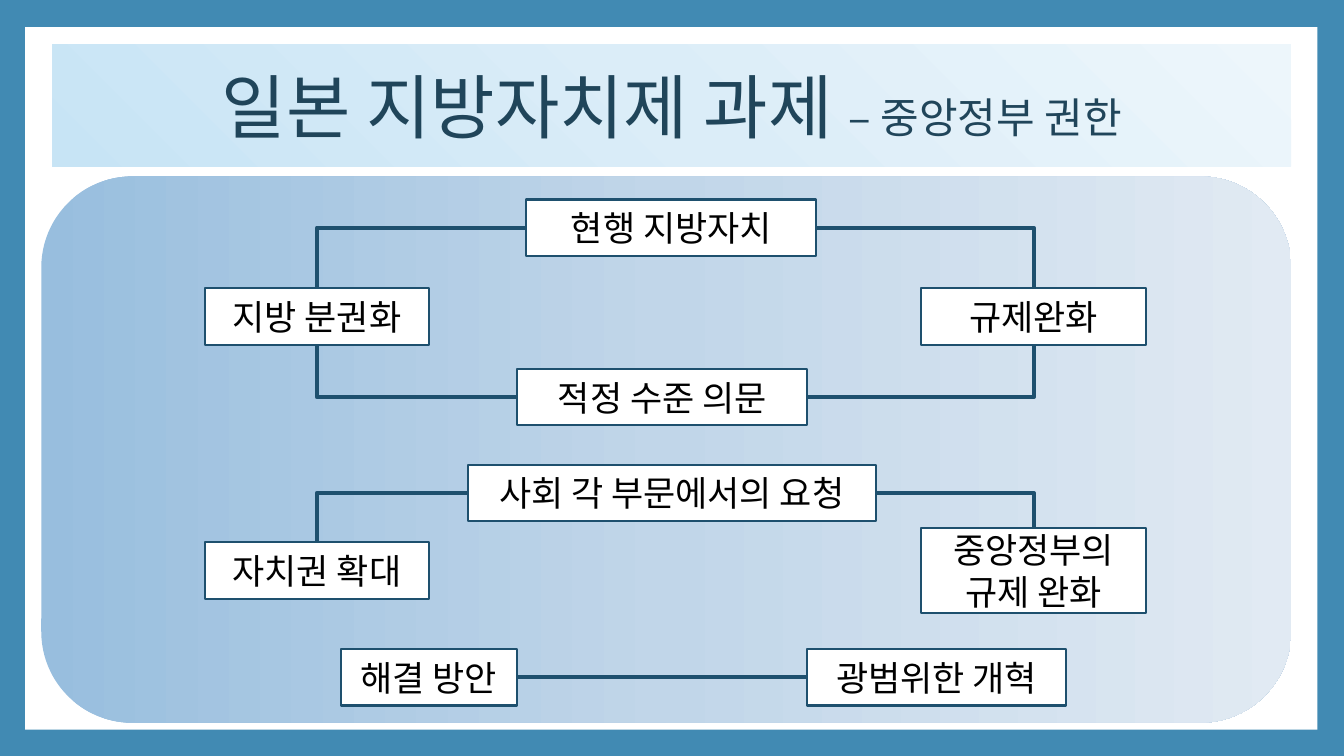
import pptx
import pptx.util
import pptx.dml.color
import pptx.enum.shapes
import pptx.enum.text
import pptx.oxml
import pptx.oxml.ns

EMU_PER_PX = 9144  # 100 px to the inch
FONT = "Arial"
FRAME, WHITE, BLACK, NAVY, TITLE_INK = "418AB3", "FFFFFF", "000000", "1E506E", "20455A"

TITLE = [("일본 지방자치제 과제 ", 50), ("– 중앙정부 권한", 30)]
TITLE_STOPS = ["C7E4F5", "DBEDF8", "EDF6FB"]
PANEL_STOPS = ["98BEDE", "C1D6E9", "E1EAF3"]
FROM_LEFT = '<a:lin {} ang="0" scaled="0"/>'
FROM_BOTTOM_LEFT = '<a:path {} path="circle"><a:fillToRect t="100000" r="100000"/></a:path>'

# name: (text, left, top, width, height)
BOXES = {
    "current": ("현행 지방자치", 522, 198, 288, 56),
    "decentralize": ("지방 분권화", 203, 286, 223, 56),
    "deregulate": ("규제완화", 914, 286, 223, 56),
    "doubt": ("적정 수준 의문", 513, 366, 288, 56),
    "demand": ("사회 각 부문에서의 요청", 464, 461, 405, 56),
    "autonomy": ("자치권 확대", 203, 538, 223, 56),
    "relax": ("중앙정부의 규제 완화", 914, 524, 223, 84),
    "solution": ("해결 방안", 338, 644, 175, 56),
    "reform": ("광범위한 개혁", 801, 644, 257, 56),
}

# connection sites of a rectangle
TOP, LEFT, BOTTOM, RIGHT = range(4)
LINKS = [
    ("solution", RIGHT, "reform", LEFT),
    ("current", LEFT, "decentralize", TOP),
    ("current", RIGHT, "deregulate", TOP),
    ("doubt", LEFT, "decentralize", BOTTOM),
    ("doubt", RIGHT, "deregulate", BOTTOM),
    ("demand", LEFT, "autonomy", TOP),
    ("demand", RIGHT, "relax", TOP),
]


def px(length):
    return pptx.util.Emu(length * EMU_PER_PX)


def color(value):
    return pptx.dml.color.RGBColor.from_string(value)


def add_box(page, left, top, width, height, kind="RECTANGLE", fill=WHITE, line=None):
    kind = getattr(pptx.enum.shapes.MSO_SHAPE, kind)
    box = page.shapes.add_shape(kind, px(left), px(top), px(width), px(height))
    box.shadow.inherit = False
    box.fill.solid()
    box.fill.fore_color.rgb = color(fill)
    if line:
        box.line.color.rgb = color(line)
        box.line.width = pptx.util.Pt(1.5)
    else:
        box.line.fill.background()
    return box


def set_gradient(box, stops, direction):
    """Fill the box with evenly spaced colour stops."""
    box.fill.gradient()
    gradient = box.element.spPr.find(pptx.oxml.ns.qn("a:gradFill"))
    for child in list(gradient):
        gradient.remove(child)
    namespace = pptx.oxml.ns.nsdecls("a")
    marks = "".join(
        f'<a:gs pos="{100000 * i // (len(stops) - 1)}"><a:srgbClr val="{stop}"/></a:gs>'
        for i, stop in enumerate(stops)
    )
    gradient.append(pptx.oxml.parse_xml(f"<a:gsLst {namespace}>{marks}</a:gsLst>"))
    gradient.append(pptx.oxml.parse_xml(direction.format(namespace)))


def write(box, text, size, ink):
    """Add a run of text to the centred paragraph of the box."""
    box.text_frame.word_wrap = True
    box.text_frame.vertical_anchor = pptx.enum.text.MSO_ANCHOR.MIDDLE
    para = box.text_frame.paragraphs[0]
    para.alignment = pptx.enum.text.PP_ALIGN.CENTER
    span = para.add_run()
    span.text = text
    span.font.name = FONT
    span.font.size = pptx.util.Pt(size)
    span.font.color.rgb = color(ink)


def link(page, start, start_site, end, end_site):
    """Join two boxes, with one corner unless both sites are on the sides."""
    straight = end_site in (LEFT, RIGHT)
    kinds = pptx.enum.shapes.MSO_CONNECTOR
    kind = kinds.STRAIGHT if straight else kinds.ELBOW
    connector = page.shapes.add_connector(kind, 0, 0, 0, 0)
    connector.begin_connect(start, start_site)
    connector.end_connect(end, end_site)
    connector.line.color.rgb = color(NAVY)
    connector.line.width = pptx.util.Pt(3)
    properties = connector.element.spPr
    if not straight:
        properties.find(pptx.oxml.ns.qn("a:prstGeom")).set("prst", "bentConnector2")
    namespace = pptx.oxml.ns.nsdecls("a")
    properties.append(pptx.oxml.parse_xml(f"<a:effectLst {namespace}/>"))


def main():
    deck = pptx.Presentation()
    deck.slide_width = pptx.util.Inches(40 / 3)
    deck.slide_height = px(750)
    page = deck.slides.add_slide(deck.slide_layouts[6])
    page.background.fill.solid()
    page.background.fill.fore_color.rgb = color(FRAME)

    add_box(page, 25, 27, 1282, 697)
    banner = add_box(page, 52, 44, 1229, 121)
    set_gradient(banner, TITLE_STOPS, FROM_BOTTOM_LEFT)
    for text, size in TITLE:
        write(banner, text, size, TITLE_INK)
    panel = add_box(page, 41, 175, 1240, 542, kind="ROUNDED_RECTANGLE")
    set_gradient(panel, PANEL_STOPS, FROM_LEFT)

    boxes = {}
    for name, (text, *place) in BOXES.items():
        boxes[name] = add_box(page, *place, line=NAVY)
        write(boxes[name], text, 25, BLACK)
    for start, start_site, end, end_site in LINKS:
        link(page, boxes[start], start_site, boxes[end], end_site)

    deck.save("out.pptx")


if __name__ == "__main__":
    main()
